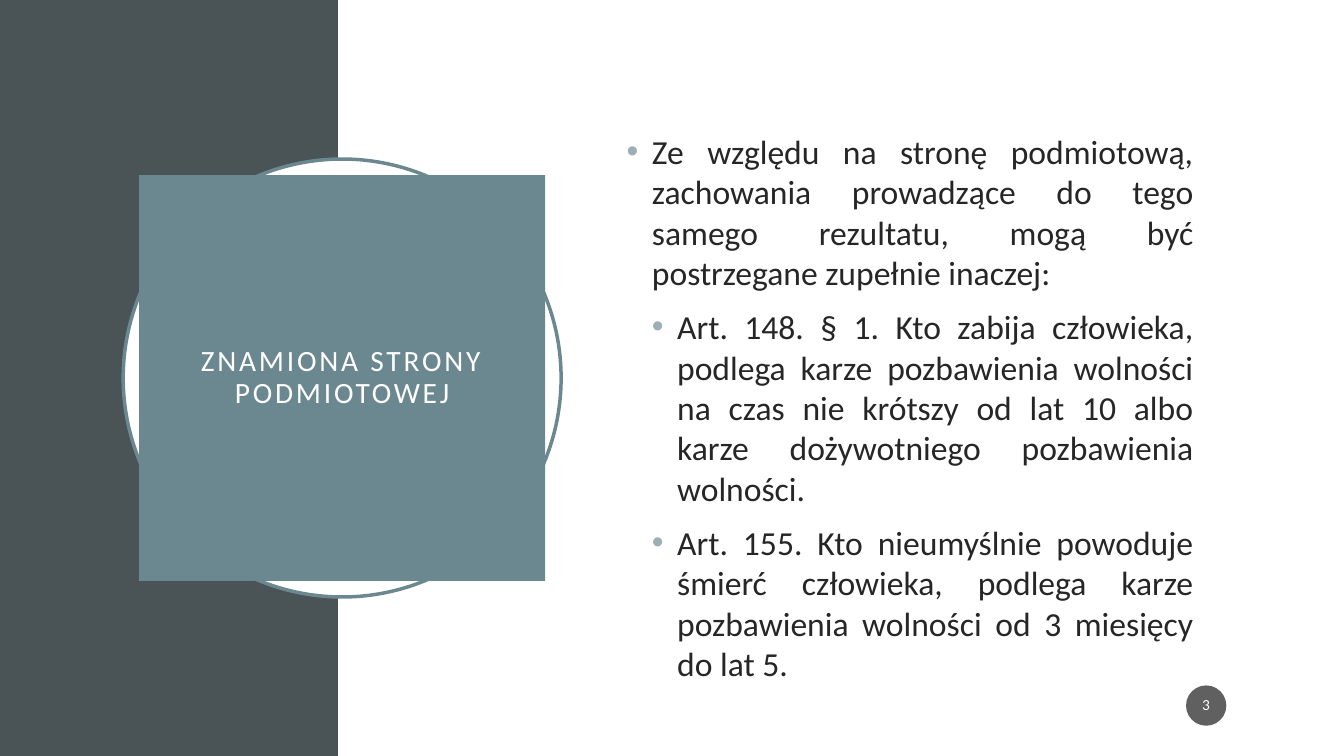
from lxml import etree
from pptx import Presentation
from pptx.dml.color import RGBColor
from pptx.enum import shapes, text
from pptx.oxml import ns
from pptx.util import Pt

HUES = {"dark": "4A5356", "white": "FFFFFF", "teal": "6B8891",
        "dot": "9BAFB5", "ink": "262626", "badge": "1D1D1D"}
KIND = shapes.MSO_SHAPE
SIDE = text.PP_ALIGN
ANCHOR = text.MSO_ANCHOR
STEP = 18

LEAD = ("Ze względu na stronę podmiotową, zachowania prowadzące do tego "
        "samego rezultatu, mogą być postrzegane zupełnie inaczej:")
RULES = [
    "Art. 148. § 1. Kto zabija człowieka, podlega karze pozbawienia wolności "
    "na czas nie krótszy od lat 10 albo karze dożywotniego pozbawienia wolności.",
    "Art. 155. Kto nieumyślnie powoduje śmierć człowieka, podlega karze "
    "pozbawienia wolności od 3 miesięcy do lat 5.",
]


def hue(name):
    return RGBColor.from_string(HUES[name])


def write(para, words, size=24, color="white", align=SIDE.CENTER,
          line=None, before=0, after=0, track=None):
    para.alignment = align
    para.line_spacing = line
    para.space_before, para.space_after = Pt(before), Pt(after)
    run = para.add_run()
    run.text = words
    run.font.name, run.font.size = "Calibri", Pt(size)
    run.font.color.rgb = hue(color)
    if track:
        run._r.get_or_add_rPr().set("spc", str(track * 100))


def bullet(para, level):
    para.level = level
    props = para._p.get_or_add_pPr()
    props.set("marL", str(Pt(STEP * (level + 1))))
    props.set("indent", str(-Pt(STEP)))
    tint = etree.SubElement(props, ns.qn("a:buClr"))
    etree.SubElement(tint, ns.qn("a:srgbClr"), val=HUES["dot"])
    etree.SubElement(props, ns.qn("a:buFont"), typeface="Arial")
    etree.SubElement(props, ns.qn("a:buChar"), char="•")


class Deck:
    def __init__(self, wide, high):
        self.file = Presentation()
        self.file.slide_width, self.file.slide_height = Pt(wide), Pt(high)
        self.page = self.file.slides.add_slide(self.file.slide_layouts[6])

    def form(self, kind, box, fill, edge=None, alpha=None):
        item = self.page.shapes.add_shape(kind, *map(Pt, box))
        item.shadow.inherit = False
        item.fill.solid()
        item.fill.fore_color.rgb = hue(fill)
        if alpha:
            tone = item._element.spPr.find(".//" + ns.qn("a:srgbClr"))
            etree.SubElement(tone, ns.qn("a:alpha"), val=str(alpha * 1000))
        if edge:
            item.line.color.rgb = hue(edge)
            item.line.width = Pt(2.5)
        else:
            item.line.fill.background()
        return item

    def label(self, item, words, pad, **style):
        frame = self.frame(item, ANCHOR.MIDDLE, pad)
        write(frame.paragraphs[0], words, **style)

    def frame(self, item, anchor, pad):
        frame = item.text_frame
        frame.word_wrap = True
        frame.vertical_anchor = anchor
        frame.margin_left = frame.margin_right = Pt(pad[0])
        frame.margin_top = frame.margin_bottom = Pt(pad[1])
        return frame

    def points(self, box, items):
        """Add a bulleted text box from (level, words) pairs."""
        area = self.page.shapes.add_textbox(*map(Pt, box))
        frame = self.frame(area, ANCHOR.TOP, (7.2, 3.6))
        for i, (level, words) in enumerate(items):
            para = frame.paragraphs[0] if i == 0 else frame.add_paragraph()
            write(para, words, color="ink", align=SIDE.JUSTIFY,
                  before=10 if i else 0)
            bullet(para, level)


def main():
    deck = Deck(960, 540)
    deck.form(KIND.RECTANGLE, (0, 0, 241.6, 540), "dark")
    deck.form(KIND.RECTANGLE, (241.6, 0, 718.4, 540), "white")
    deck.form(KIND.OVAL, (88, 113.6, 312.8, 312.8), "white", edge="teal")
    title = deck.form(KIND.RECTANGLE, (99.4, 125, 290, 290), "teal")
    deck.label(title, "ZNAMIONA STRONY PODMIOTOWEJ", (14.4, 14.4),
               size=21, line=0.9, track=2)
    deck.points((440.6, 90, 419, 402),
                [(0, LEAD)] + [(1, rule) for rule in RULES])
    badge = deck.form(KIND.OVAL, (847.2, 489.6, 28.8, 28.8), "badge", alpha=70)
    deck.label(badge, "3", (1.4, 3.6), size=11, line=0.9, after=6)
    deck.file.save("out.pptx")


if __name__ == "__main__":
    main()
